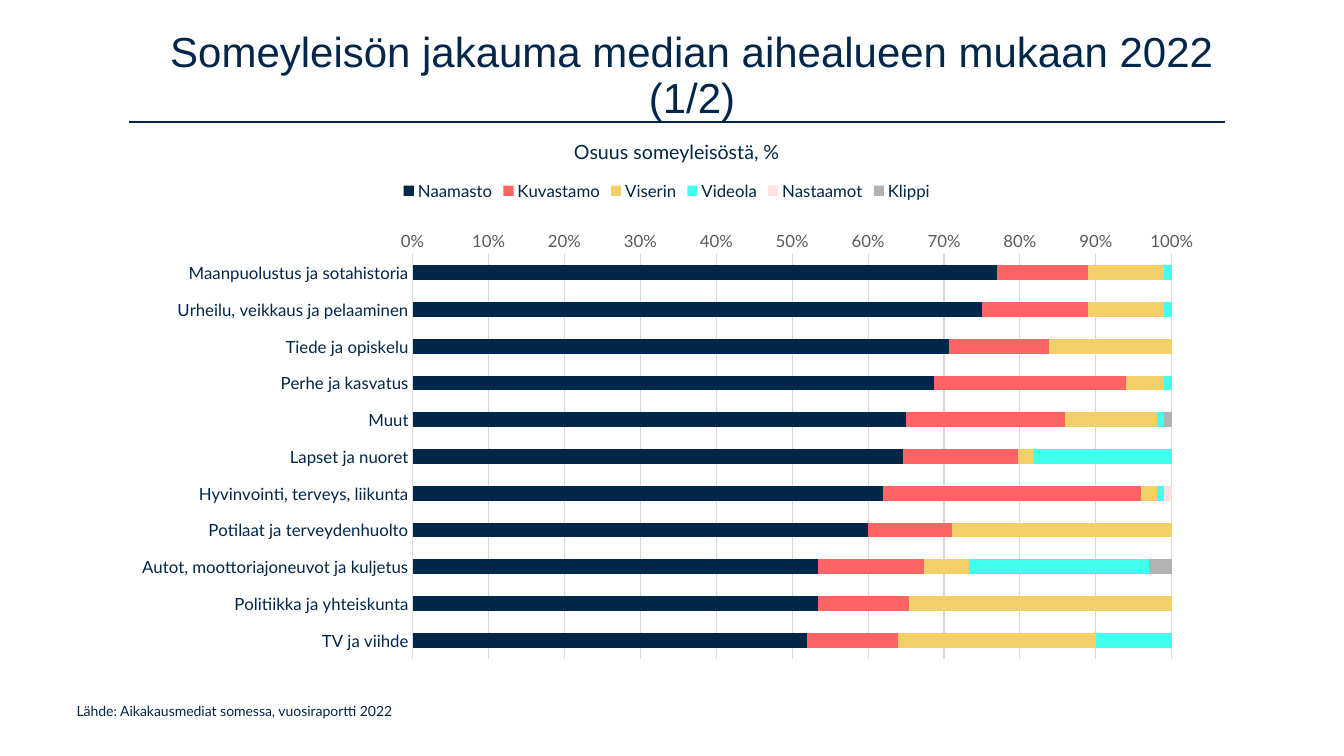
from lxml import etree
from pptx import Presentation
from pptx.chart.data import CategoryChartData
from pptx.dml.color import RGBColor
from pptx.enum import chart as charts, shapes, text
from pptx.oxml import parse_xml
from pptx.oxml.ns import nsdecls, qn
from pptx.util import Cm, Pt

NAVY, GRID, AXIS_GREY = "002649", "D9D9D9", "595959"

CATEGORIES = [
    "Maanpuolustus ja sotahistoria", "Urheilu, veikkaus ja pelaaminen",
    "Tiede ja opiskelu", "Perhe ja kasvatus", "Muut", "Lapset ja nuoret",
    "Hyvinvointi, terveys, liikunta", "Potilaat ja terveydenhuolto",
    "Autot, moottoriajoneuvot ja kuljetus", "Politiikka ja yhteiskunta",
    "TV ja viihde",
]
# Channel name, colour, share of the audience per category
CHANNELS = [
    ("Naamasto", NAVY, [77, 75, 70, 68, 65, 64, 62, 60, 54, 54, 52]),
    ("Kuvastamo", "FF6464", [12, 14, 13, 25, 21, 15, 34, 11, 14, 12, 12]),
    ("Viserin", "F3CF67", [10, 10, 16, 5, 12, 2, 2, 29, 6, 35, 26]),
    ("Videola", "43FFED", [1, 1, 0, 1, 1, 18, 1, 0, 24, 0, 10]),
    ("Nastaamot", "FFE0E0", [0, 0, 0, 0, 0, 0, 1, 0, 0, 0, 0]),
    ("Klippi", "B2B2B2", [0, 0, 0, 0, 1, 0, 0, 0, 3, 0, 0]),
]


def color(value):
    return RGBColor.from_string(value)


def set_font(font, size, value, name="Lato"):
    formats = {"size": Pt(size), "name": name, "bold": False}
    for attribute, setting in formats.items():
        setattr(font, attribute, setting)
    font.color.rgb = color(value)


def set_line(line, value, width):
    line.color.rgb = color(value)
    line.width = Pt(width)


def add_text(slide, box, words, size, name="Lato", anchor="TOP", **formats):
    shape = slide.shapes.add_textbox(*map(Cm, box))
    frame = shape.text_frame
    frame.word_wrap = True
    frame.vertical_anchor = text.MSO_ANCHOR[anchor]
    paragraph = frame.paragraphs[0]
    paragraph.text = words
    for attribute, setting in formats.items():
        setattr(paragraph, attribute, setting)
    set_font(paragraph.runs[0].font, size, NAVY, name)


def add_header(slide, left, top, width):
    # Rule under the title
    rule = slide.shapes.add_connector(
        shapes.MSO_CONNECTOR.STRAIGHT,
        Cm(left + 0.25), Cm(top + 2.03), Cm(left + 27.86), Cm(top + 2.03))
    set_line(rule.line, NAVY, 1)
    etree.SubElement(rule._element.spPr, qn("a:effectLst"))

    # Title and chart heading
    center = text.PP_ALIGN.CENTER
    add_text(slide, (left, top, width, 1.8),
             "Someyleisön jakauma median aihealueen mukaan 2022 (1/2)",
             30, "Arial", "MIDDLE", alignment=center, line_spacing=0.9)
    add_text(slide, (left + 0.25, top + 2.36, 27.61, 0.86),
             "Osuus someyleisöstä, %", 14, alignment=center)


def set_plot_layout(chart, **fractions):
    plot_area = chart._chartSpace.chart.plotArea
    for layout in plot_area.findall(qn("c:layout")):
        plot_area.remove(layout)
    places = "".join(f'<c:{key} val="{value}"/>' for key, value in fractions.items())
    plot_area.insert(0, parse_xml(
        f'<c:layout {nsdecls("c")}><c:manualLayout><c:layoutTarget val="inner"/>'
        '<c:xMode val="edge"/><c:yMode val="edge"/>'
        f'{places}</c:manualLayout></c:layout>'))


def add_audience_chart(slide, box):
    data = CategoryChartData(number_format="#,##0")
    data.categories = CATEGORIES
    for name, _, values in CHANNELS:
        data.add_series(name, values)
    chart = slide.shapes.add_chart(
        charts.XL_CHART_TYPE.BAR_STACKED_100, *map(Cm, box), data).chart
    chart.has_title = False
    set_font(chart.font, 10, "000000")
    set_plot_layout(chart, x=0.268, y=0.168, w=0.693, h=0.799)

    # Bars
    plot = chart.plots[0]
    for attribute, setting in {"gap_width": 150, "overlap": 100,
                               "vary_by_categories": False}.items():
        setattr(plot, attribute, setting)
    for series, (_, fill, _) in zip(plot.series, CHANNELS):
        series.format.fill.solid()
        series.format.fill.fore_color.rgb = color(fill)
        series.invert_if_negative = False

    # Axes: categories run from the top, which puts the scale above the bars
    for axis, value in ((chart.category_axis, NAVY), (chart.value_axis, AXIS_GREY)):
        axis.major_tick_mark = axis.minor_tick_mark = charts.XL_TICK_MARK.NONE
        set_font(axis.tick_labels.font, 12, value)
    chart.category_axis.reverse_order = True
    set_line(chart.category_axis.format.line, GRID, 0.75)
    scale = chart.value_axis
    scale.major_unit = 0.1
    scale.format.line.fill.background()
    set_line(scale.major_gridlines.format.line, GRID, 0.75)
    scale.tick_labels.number_format = "0%"
    scale.tick_labels.number_format_is_linked = False

    # Legend
    chart.has_legend = True
    chart.legend.position = charts.XL_LEGEND_POSITION.TOP
    chart.legend.include_in_layout = False
    set_font(chart.legend.font, 12, NAVY)


def main():
    presentation = Presentation()
    presentation.slide_width, presentation.slide_height = Cm(33.87), Cm(19.05)
    slide = presentation.slides.add_slide(presentation.slide_layouts[6])
    add_header(slide, 3, 1.04, 28.88)
    add_audience_chart(slide, (3, 4.27, 27.61, 12.75))
    add_text(slide, (1.68, 17.58, 16.71, 1.12),
             "Lähde: Aikakausmediat somessa, vuosiraportti 2022", 10)
    presentation.save("out.pptx")


if __name__ == "__main__":
    main()
